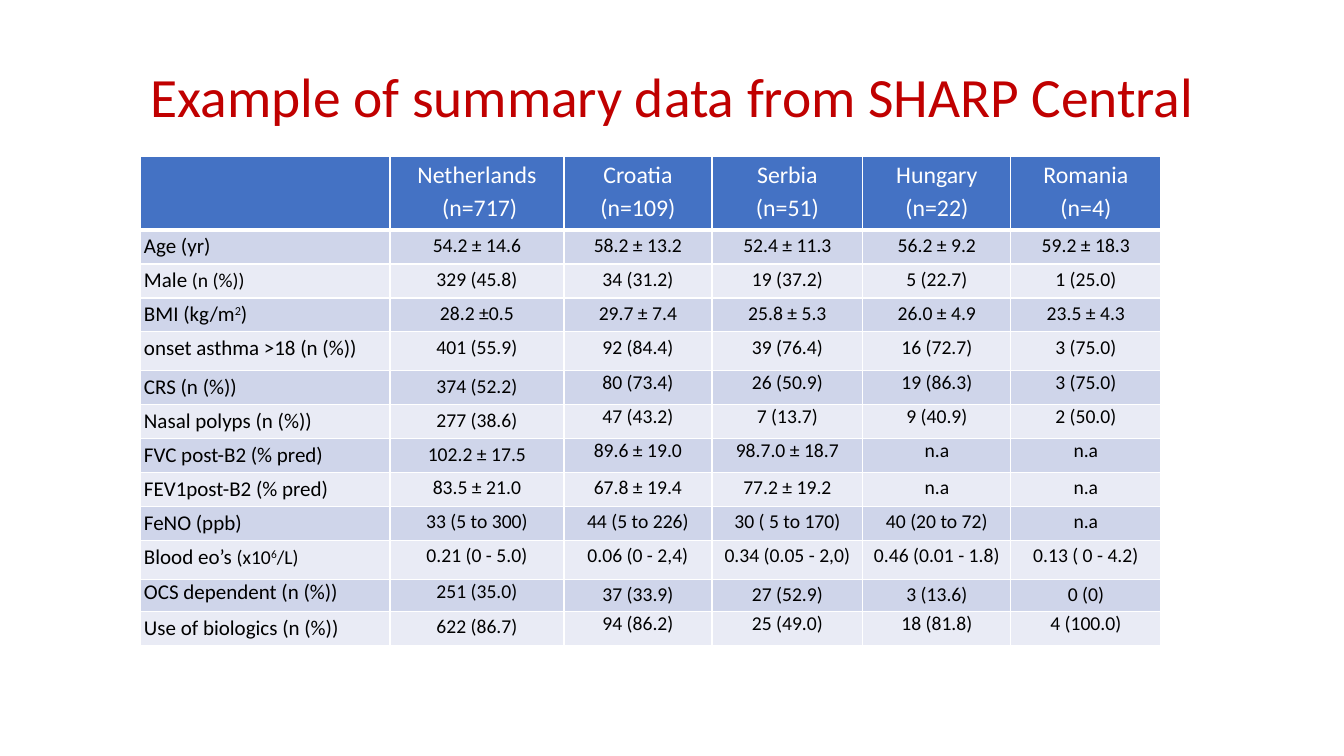
from lxml.etree import SubElement
from pptx import Presentation
from pptx.dml.color import RGBColor
from pptx.enum.text import MSO_ANCHOR, MSO_AUTO_SIZE, PP_ALIGN
from pptx.oxml.ns import qn
from pptx.util import Emu, Pt

PX = 914400 / 100.8
RED = RGBColor(0xC0, 0x00, 0x00)
BLUE = RGBColor(0x44, 0x72, 0xC4)
DARK_BAND = RGBColor(0xCF, 0xD5, 0xEA)
LIGHT_BAND = RGBColor(0xE9, 0xEB, 0xF5)
WHITE = RGBColor(0xFF, 0xFF, 0xFF)
BLACK = RGBColor(0x00, 0x00, 0x00)

COLUMN_WIDTHS = [250, 174, 148, 151, 148, 150]
ROW_HEIGHT = 34
SPECIAL_HEIGHTS = {0: 74, 4: 39, 10: 39, 11: 32}
# Cells with single line spacing: row -> columns
SINGLE_SPACED = {5: range(2, 6), 6: range(2, 6), 7: range(2, 6), 11: range(2), 12: range(2, 6)}

COUNTRIES = [
    ["Netherlands", " (n=717)"], ["Croatia", "(n=109)"], ["Serbia", "(n=51)"],
    ["Hungary", "(n=22)"], ["Romania", "(n=4)"],
]
# Each label is a list of (text, size, raised) pieces
MEASURES = [
    ([("Age (yr)", 15, False)],
     ["54.2 ± 14.6", "58.2 ± 13.2", "52.4 ± 11.3", "56.2 ± 9.2", "59.2 ± 18.3"]),
    ([("Male ", 15, False), ("(n (%))", 14, False)],
     ["329 (45.8)", "34 (31.2)", "19 (37.2)", "5 (22.7)", "1 (25.0)"]),
    ([("BMI (kg/m", 15, False), ("2", 15, True), (")", 15, False)],
     ["28.2 ±0.5", "29.7 ± 7.4", "25.8 ± 5.3", "26.0 ± 4.9", "23.5 ± 4.3"]),
    ([("onset asthma >18 (n (%))", 15, False)],
     ["401 (55.9)", "92 (84.4)", "39 (76.4)", "16 (72.7)", "3 (75.0)"]),
    ([("CRS (n (%))", 15, False)],
     ["374 (52.2)", "80 (73.4)", "26 (50.9)", "19 (86.3)", "3 (75.0)"]),
    ([("Nasal polyps (n (%))", 15, False)],
     ["277 (38.6)", "47 (43.2)", "7 (13.7)", "9 (40.9)", "2 (50.0)"]),
    ([("FVC post-B2 (% pred)", 15, False)],
     ["102.2 ± 17.5", "89.6 ± 19.0", "98.7.0 ± 18.7", "n.a", "n.a"]),
    ([("FEV1post-B2 (% pred)", 15, False)],
     ["83.5 ± 21.0", "67.8 ± 19.4", "77.2 ± 19.2", "n.a", "n.a"]),
    ([("FeNO (ppb)", 15, False)],
     ["33 (5 to 300)", "44 (5 to 226)", "30 ( 5 to 170)", "40 (20 to 72)", "n.a"]),
    ([("Blood eo’s ", 15, False), ("(x10", 14, False), ("6", 14, True), ("/L)", 14, False)],
     ["0.21 (0 - 5.0)", "0.06 (0 - 2,4)", "0.34 (0.05 - 2,0)", "0.46 (0.01 - 1.8)",
      "0.13 ( 0 - 4.2)"]),
    ([("OCS dependent (n (%))", 15, False)],
     ["251 (35.0)", "37 (33.9)", "27 (52.9)", "3 (13.6)", "0 (0)"]),
    ([("Use of biologics (n (%))", 15, False)],
     ["622 (86.7)", "94 (86.2)", "25 (49.0)", "18 (81.8)", "4 (100.0)"]),
]


def px(length):
    return Emu(round(length * PX))


def write(para, text, size=14, color=BLACK, align=PP_ALIGN.CENTER, spacing=1.15, raised=False):
    """Append a formatted span to the paragraph."""
    para.alignment = align
    para.line_spacing = spacing
    span = para.add_run()
    span.text = text
    span.font.name = "Calibri"
    span.font.size = Pt(size)
    span.font.bold = False
    span.font.color.rgb = color
    if raised:
        span.font._element.set("baseline", "30000")


deck = Presentation()
deck.slide_width, deck.slide_height = px(1344), px(756)
page = deck.slides.add_slide(deck.slide_layouts[5])

title = page.shapes.title
title.left, title.top, title.width, title.height = px(93), px(32), px(1159), px(103)
title.text_frame.auto_size = MSO_AUTO_SIZE.NONE
title.text_frame.vertical_anchor = MSO_ANCHOR.BOTTOM
write(title.text_frame.paragraphs[0], "Example of summary data from SHARP Central",
      size=39.6, color=RED, spacing=0.9)

heights = [SPECIAL_HEIGHTS.get(row, ROW_HEIGHT) for row in range(len(MEASURES) + 1)]
table = page.shapes.add_table(
    len(heights), len(COLUMN_WIDTHS),
    px(140), px(156), px(sum(COLUMN_WIDTHS)), px(sum(heights))).table
for column, width in zip(table.columns, COLUMN_WIDTHS):
    column.width = px(width)

for row, height in enumerate(heights):
    table.rows[row].height = px(height)
    band = BLUE if row == 0 else DARK_BAND if row % 2 else LIGHT_BAND
    for cell in table.rows[row].cells:
        cell.margin_left = cell.margin_right = px(4)
        cell.margin_top = cell.margin_bottom = 0
        properties = cell._tc.get_or_add_tcPr()
        for side in ("lnL", "lnR", "lnT", "lnB"):
            points = 3 if row == 0 and side == "lnB" else 1
            border = SubElement(properties, qn(f"a:{side}"), w=str(Pt(points)))
            SubElement(SubElement(border, qn("a:solidFill")), qn("a:srgbClr"), val=str(WHITE))
        cell.fill.solid()
        cell.fill.fore_color.rgb = band

for column, (country, count) in enumerate(COUNTRIES, start=1):
    frame = table.cell(0, column).text_frame
    write(frame.paragraphs[0], country, size=17, color=WHITE)
    write(frame.add_paragraph(), count, size=17, color=WHITE)

for row, (label, values) in enumerate(MEASURES, start=1):
    spacings = [1.0 if column in SINGLE_SPACED.get(row, ()) else 1.15
                for column in range(len(COLUMN_WIDTHS))]
    label_para = table.cell(row, 0).text_frame.paragraphs[0]
    for text, size, raised in label:
        write(label_para, text, size=size, align=PP_ALIGN.LEFT, spacing=spacings[0], raised=raised)
    for column, value in enumerate(values, start=1):
        write(table.cell(row, column).text_frame.paragraphs[0], value, spacing=spacings[column])

deck.save("out.pptx")
